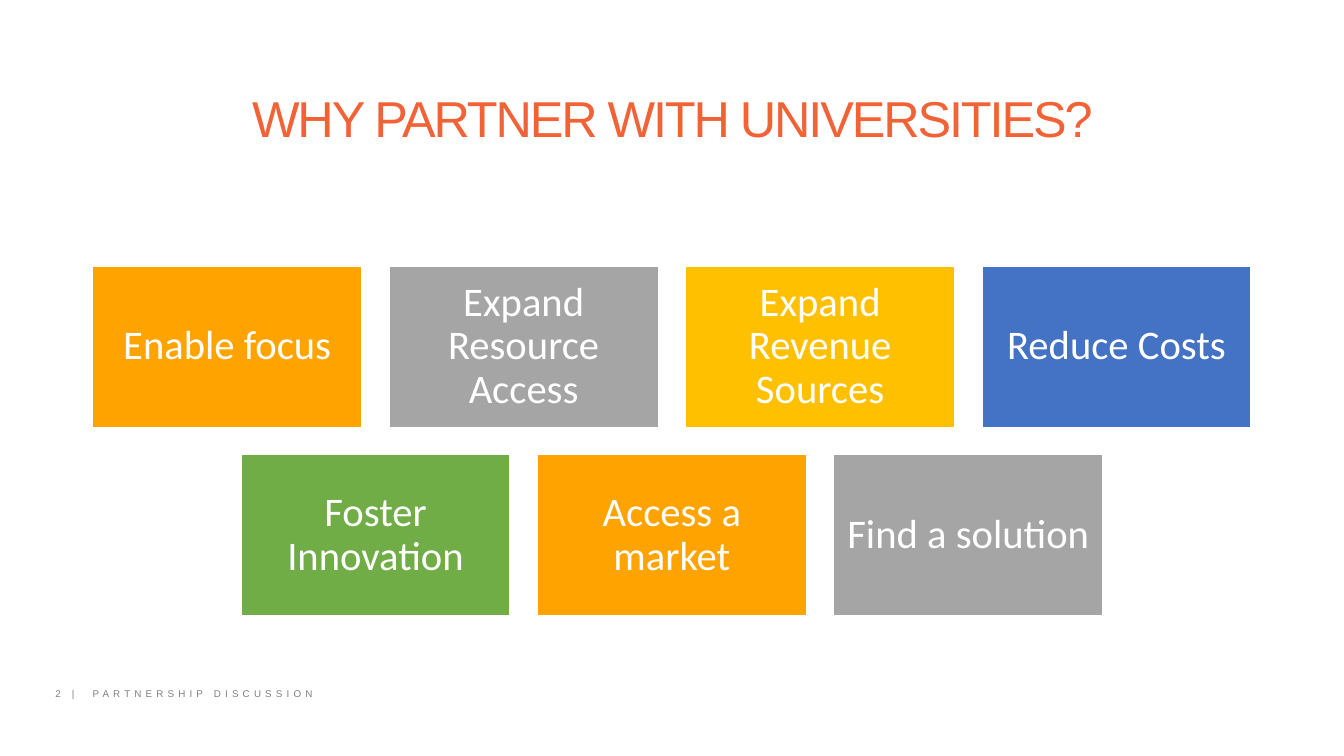
import pptx
import pptx.util
import pptx.dml.color
import pptx.enum.shapes
import pptx.enum.text
import lxml.etree
from dataclasses import dataclass

Inches = pptx.util.Inches
Pt = pptx.util.Pt
Color = pptx.dml.color.RGBColor.from_string
Align = pptx.enum.text.PP_ALIGN
Anchor = pptx.enum.text.MSO_ANCHOR


@dataclass
class Theme:
    title: str = "F16336"
    white: str = "FFFFFF"
    foot: str = "808080"
    fills: tuple = ("FFA300", "A5A5A5", "FFC000", "4472C4", "70AD47")
    head: str = "Arial"
    body: str = "Calibri"
    big: int = 36
    mid: int = 29
    small: int = 7


theme = Theme()


def style(para, name, size, color):
    para.font.name = name
    para.font.size = Pt(size)
    para.font.color.rgb = Color(color)


def track(para, points):
    for run in para.runs:
        run.font._element.set("spc", str(int(points * 100)))


deck = pptx.Presentation()
deck.slide_width = Inches(13.33)
deck.slide_height = Inches(7.5)
slide = deck.slides.add_slide(deck.slide_layouts[5])

title = slide.shapes.title
title.left, title.top = Inches(0.45), Inches(0.88)
title.width, title.height = Inches(12.44), Inches(0.59)
frame = title.text_frame
frame.auto_size = pptx.enum.text.MSO_AUTO_SIZE.NONE
frame.vertical_anchor = Anchor.TOP
para = frame.paragraphs[0]
para.text = "WHY PARTNER WITH UNIVERSITIES?"
para.alignment = Align.CENTER
para.line_spacing = 0.9
style(para, theme.head, theme.big, theme.title)
track(para, -1.5)

rows = [
    ["Enable focus", "Expand Resource Access", "Expand Revenue Sources", "Reduce Costs"],
    ["Foster Innovation", "Access a market", "Find a solution"],
]
wide, high, gap = 2.67, 1.6, 0.27
count = 0
for row, labels in enumerate(rows):
    span = len(labels) * (wide + gap) - gap
    left = (13.33 - span) / 2
    top = 2.64 + row * (high + gap)
    for col, label in enumerate(labels):
        box = slide.shapes.add_shape(
            pptx.enum.shapes.MSO_SHAPE.RECTANGLE,
            Inches(left + col * (wide + gap)), Inches(top), Inches(wide), Inches(high))
        box.shadow.inherit = False
        box.fill.solid()
        box.fill.fore_color.rgb = Color(theme.fills[count % len(theme.fills)])
        box.line.color.rgb = Color(theme.white)
        box.line.width = Pt(1)
        frame = box.text_frame
        frame.word_wrap = True
        frame.vertical_anchor = Anchor.MIDDLE
        frame.margin_left = frame.margin_right = Inches(0.12)
        frame.margin_top = frame.margin_bottom = Inches(0.12)
        para = frame.paragraphs[0]
        para.text = label
        para.alignment = Align.CENTER
        para.line_spacing = 0.9
        style(para, theme.body, theme.mid, theme.white)
        count += 1

foot = slide.shapes.add_textbox(Inches(0.45), Inches(6.75), Inches(9), Inches(0.27))
frame = foot.text_frame
frame.word_wrap = True
frame.vertical_anchor = Anchor.MIDDLE
para = frame.paragraphs[0]
para.text = "2 |\tPARTNERSHIP DISCUSSION"
space = "{http://schemas.openxmlformats.org/drawingml/2006/main}"
tabs = lxml.etree.SubElement(para._p.get_or_add_pPr(), space + "tabLst")
lxml.etree.SubElement(tabs, space + "tab", pos=str(Inches(0.37)), algn="l")
style(para, theme.head, theme.small, theme.foot)
track(para, 3)

deck.save("out.pptx")
